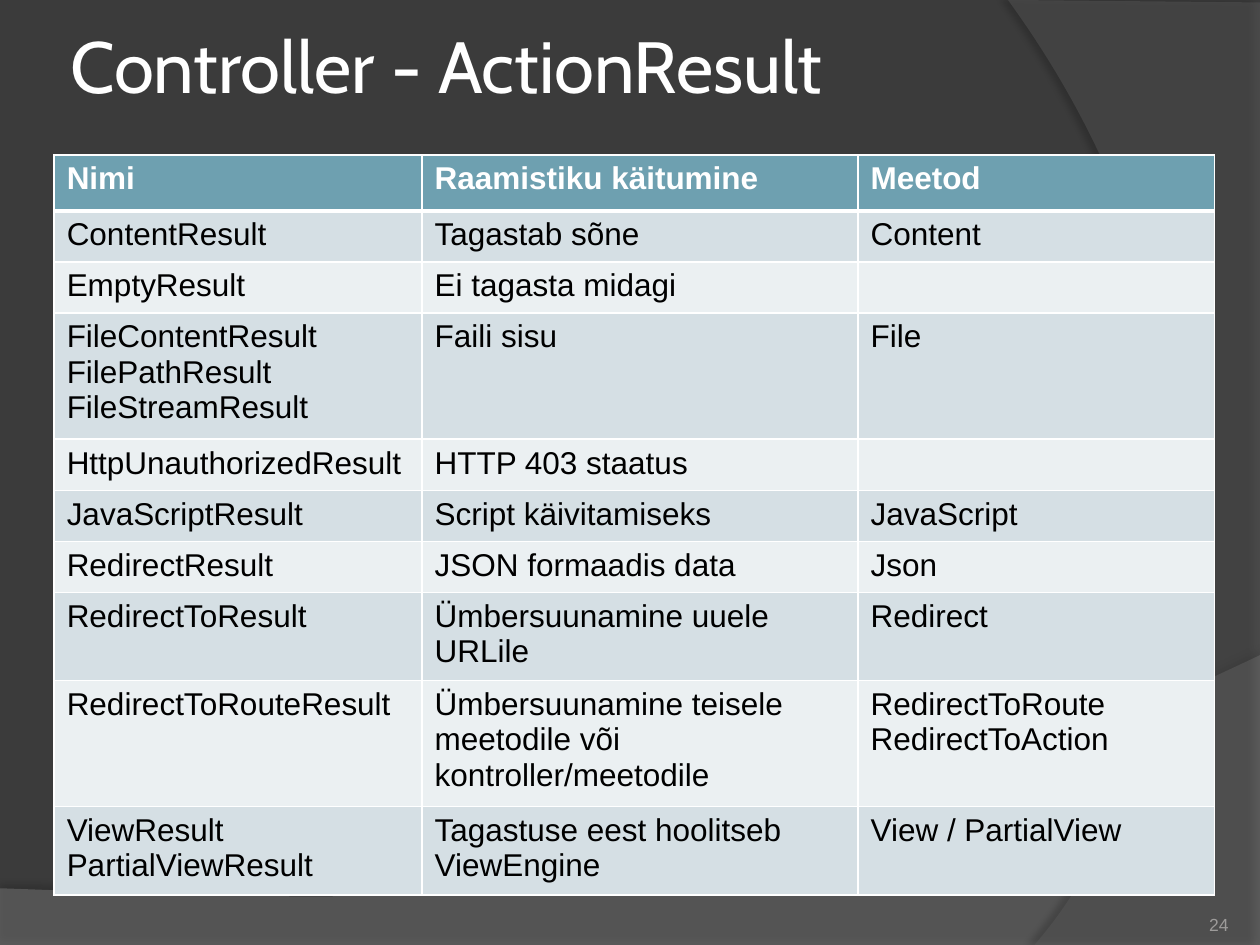
import pptx
import pptx.dml.color
import pptx.enum.text
import pptx.oxml
import pptx.oxml.ns
import pptx.util

SLIDE_W, SLIDE_H = 10, 7.5
WHITE = "FFFFFF"
HEADER_FILL, BAND_FILLS = "6EA0B0", ("D5DFE4", "EBF0F2")

TITLE = "Controller - ActionResult"
PAGE_NUMBER = "24"
# Each row: number of text lines, then its cells
RESULTS = [
    (1, "Nimi", "Raamistiku käitumine", "Meetod"),
    (1, "ContentResult", "Tagastab sõne", "Content"),
    (1, "EmptyResult", "Ei tagasta midagi", ""),
    (3, "FileContentResult FilePathResult FileStreamResult", "Faili sisu", "File"),
    (1, "HttpUnauthorizedResult", "HTTP 403 staatus", ""),
    (1, "JavaScriptResult", "Script käivitamiseks", "JavaScript"),
    (1, "RedirectResult", "JSON formaadis data", "Json"),
    (2, "RedirectToResult", "Ümbersuunamine uuele URLile", "Redirect"),
    (3, "RedirectToRouteResult",
     "Ümbersuunamine teisele meetodile või kontroller/meetodile",
     "RedirectToRoute\nRedirectToAction"),
    (2, "ViewResult\nPartialViewResult", "Tagastuse eest hoolitseb ViewEngine",
     "View / PartialView"),
]
TABLE_LEFT, TABLE_TOP = 0.43, 1.23
COLUMN_WIDTHS = (2.92, 3.46, 2.83)
# Row heights in points
HEADER_HEIGHT, MIN_ROW_HEIGHT, LINE_HEIGHT, CELL_PADDING = 32, 29.2, 20, 7.5

# Each wave: one Bezier edge, the slide corners that close it, and its look
WAVES = [
    {"edge": ((10, 5.2), (5.59, 7.29), (3.91, 7.19), (0, 7.05)),
     "corners": [(0, SLIDE_H), (SLIDE_W, SLIDE_H)],
     "fill": "7F7F7F", "opacity": 45,
     "shadow": {"opacity": 35, "blur": 4, "distance": 3.5, "angle": 270}},
    {"edge": ((8.21, 7.5), (9.35, 6.19), (10.18, 3), (8, 0)),
     "corners": [(SLIDE_W, 0.02), (SLIDE_W, SLIDE_H)],
     "fill": "5E5E5E", "opacity": 40,
     "shadow": {"opacity": 45, "blur": 4, "distance": 4, "angle": 180}},
]


def color(hex_code):
    return pptx.dml.color.RGBColor.from_string(hex_code)


def inches(*lengths):
    return [pptx.util.Inches(length) for length in lengths]


def paint(fill, hex_code):
    fill.solid()
    fill.fore_color.rgb = color(hex_code)


def xml(markup):
    opening, rest = markup.split(" ", 1)
    return pptx.oxml.parse_xml(f"{opening} {pptx.oxml.ns.nsdecls('a')} {rest}")


def write(frame, text, size, font_name, hex_code, bold=False, align=None):
    frame.text = text
    look = {"size": pptx.util.Pt(size), "name": font_name, "bold": bold}
    for paragraph in frame.paragraphs:
        paragraph.alignment = align
        for part in (paragraph, *paragraph.runs):
            for attribute, value in look.items():
                setattr(part.font, attribute, value)
            part.font.color.rgb = color(hex_code)


def add_label(slide, box, text, margin, anchor, **look):
    frame = slide.shapes.add_textbox(*inches(*box)).text_frame
    layout = {"word_wrap": True, "vertical_anchor": anchor}
    for side in ("left", "top", "right", "bottom"):
        layout[f"margin_{side}"] = pptx.util.Inches(margin)
    for attribute, value in layout.items():
        setattr(frame, attribute, value)
    write(frame, text, **look)


def add_wave(slide, wave):
    start, *curve = wave["edge"]
    builder = slide.shapes.build_freeform(*inches(*start))
    builder.add_line_segments(
        [inches(*point) for point in (curve[-1], *wave["corners"])], close=True)
    shape = builder.convert_to_shape()
    paint(shape.fill, wave["fill"])
    shape.line.fill.background()

    # Bend the first straight side into the curved edge
    side = shape._element.find(".//" + pptx.oxml.ns.qn("a:lnTo"))
    points = "".join(f'<a:pt x="{x - shape.left}" y="{y - shape.top}"/>'
                     for x, y in (inches(*point) for point in curve))
    side.getparent().replace(side, xml(f"<a:cubicBezTo >{points}</a:cubicBezTo>"))

    # Transparency and shadow
    properties = shape._element.spPr
    properties.find(".//" + pptx.oxml.ns.qn("a:srgbClr")).append(
        xml(f'<a:alpha val="{wave["opacity"] * 1000}"/>'))
    shadow = wave["shadow"]
    properties.append(xml(
        f'<a:effectLst ><a:outerShdw blurRad="{pptx.util.Pt(shadow["blur"])}" '
        f'dist="{pptx.util.Pt(shadow["distance"])}" dir="{shadow["angle"] * 60000}" '
        f'algn="ctr" rotWithShape="0"><a:srgbClr val="000000">'
        f'<a:alpha val="{shadow["opacity"] * 1000}"/></a:srgbClr>'
        f'</a:outerShdw></a:effectLst>'))


def add_borders(cell, **widths):
    properties = cell._tc.get_or_add_tcPr()
    for position, side in enumerate("LRTB"):
        width = pptx.util.Pt(widths.get(side, 1))
        properties.insert(position, xml(
            f'<a:ln{side} w="{width}"><a:solidFill><a:srgbClr val="{WHITE}"/>'
            f'</a:solidFill></a:ln{side}>'))


def add_results_table(slide):
    heights = [HEADER_HEIGHT] + [
        max(MIN_ROW_HEIGHT, lines * LINE_HEIGHT + CELL_PADDING)
        for lines, *_ in RESULTS[1:]]
    table = slide.shapes.add_table(
        len(RESULTS), len(COLUMN_WIDTHS),
        *inches(TABLE_LEFT, TABLE_TOP, sum(COLUMN_WIDTHS)),
        pptx.util.Pt(sum(heights))).table
    for column, width in zip(table.columns, COLUMN_WIDTHS):
        column.width = pptx.util.Inches(width)
    for r, (_, *texts) in enumerate(RESULTS):
        header = r == 0
        table.rows[r].height = pptx.util.Pt(heights[r])
        for c, text in enumerate(texts):
            cell = table.cell(r, c)
            write(cell.text_frame, text, 18, "Arial",
                  WHITE if header else "000000", bold=header)
            paint(cell.fill, HEADER_FILL if header else BAND_FILLS[(r - 1) % 2])
            add_borders(cell, B=3 if header else 1, T=3 if r == 1 else 1)


def main():
    deck = pptx.Presentation()
    deck.slide_width, deck.slide_height = inches(SLIDE_W, SLIDE_H)
    slide = deck.slides.add_slide(deck.slide_layouts[6])

    # Background
    paint(slide.background.fill, "3B3B3B")
    for wave in WAVES:
        add_wave(slide, wave)

    # Title, table and page number
    anchors = pptx.enum.text.MSO_ANCHOR
    add_label(slide, (0.51, 0.13, 8.17, 0.77), TITLE, 0.05, anchors.MIDDLE,
              size=41.4, font_name="Cabin", hex_code=WHITE)
    add_results_table(slide)
    add_label(slide, (8.92, 7.02, 0.83, 0.4), PAGE_NUMBER, 0, anchors.BOTTOM,
              size=10, font_name="Arial", hex_code="9D9B9A",
              align=pptx.enum.text.PP_ALIGN.RIGHT)

    deck.save("out.pptx")


if __name__ == "__main__":
    main()
